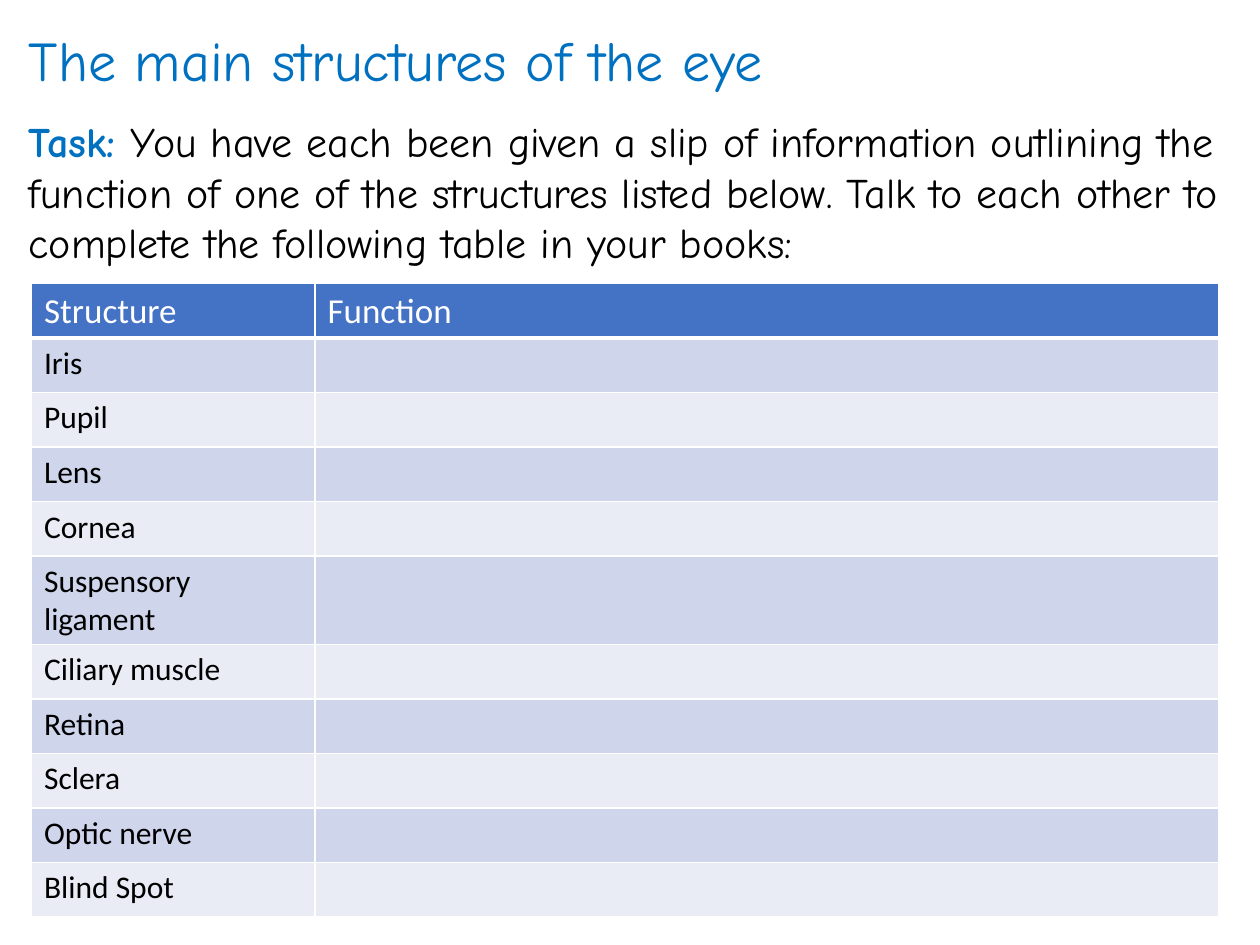
from lxml.etree import SubElement
from pptx import Presentation
from pptx.dml.color import RGBColor
from pptx.enum.text import MSO_ANCHOR, MSO_AUTO_SIZE, PP_ALIGN
from pptx.oxml.ns import qn
from pptx.util import Inches, Pt

COLORS = {
    "accent": "0070C0", "text": "000000", "white": "FFFFFF",
    "header": "4472C4", "dark_band": "CFD5EA", "light_band": "E9EBF5",
}
HEADING_FONT, TABLE_FONT = "Comic Neue", "Calibri"
STRUCTURES = [
    "Iris", "Pupil", "Lens", "Cornea", "Suspensory ligament",
    "Ciliary muscle", "Retina", "Sclera", "Optic nerve", "Blind Spot",
]
TWO_LINE_ROW = 1 + STRUCTURES.index("Suspensory ligament")
LEFT = 0.13
TABLE_BOX = (0.25, 2.25, 9.42, 5.03)
COLUMN_WIDTHS = (2.25, 7.17)
TALL_ROW = 0.7


def color(name):
    return RGBColor.from_string(COLORS[name])


def add_text(paragraph, text, *, size, font, fill="text", bold=False):
    run = paragraph.add_run()
    run.text = text
    run.font.size = Pt(size)
    run.font.name = font
    run.font.bold = bold
    run.font.color.rgb = color(fill)


def format_frame(shape):
    """Wrap the text from the top left and return its first paragraph."""
    frame = shape.text_frame
    frame.word_wrap = True
    frame.vertical_anchor = MSO_ANCHOR.TOP
    frame.auto_size = MSO_AUTO_SIZE.SHAPE_TO_FIT_TEXT
    frame.paragraphs[0].alignment = PP_ALIGN.LEFT
    return frame.paragraphs[0]


def add_title(slide):
    title = slide.shapes.title
    title.left, title.top = Inches(LEFT), Inches(0.15)
    title.width, title.height = Inches(8.17), Inches(0.64)
    add_text(format_frame(title), "The main structures of the eye",
             size=32, font=HEADING_FONT, fill="accent")


def add_task(slide):
    box = slide.shapes.add_textbox(Inches(LEFT), Inches(0.87), Inches(9.87), Inches(1.31))
    paragraph = format_frame(box)
    add_text(paragraph, "Task: ", size=24, font=HEADING_FONT, fill="accent", bold=True)
    add_text(paragraph,
             "You have each been given a slip of information outlining the function "
             "of one of the structures listed below. Talk to each other to complete "
             "the following table in your books:",
             size=24, font=HEADING_FONT)


def set_borders(cell, bottom=1):
    properties = cell._tc.get_or_add_tcPr()
    widths = {"a:lnL": 1, "a:lnR": 1, "a:lnT": 1, "a:lnB": bottom}
    for index, (tag, width) in enumerate(widths.items()):
        line = SubElement(properties, qn(tag), w=str(Pt(width)))
        fill = SubElement(line, qn("a:solidFill"))
        SubElement(fill, qn("a:srgbClr"), val=COLORS["white"])
        properties.insert(index, line)  # borders come before the cell fill


def add_structure_table(slide):
    rows = [("Structure", "Function")] + [(name, "") for name in STRUCTURES]
    frame = slide.shapes.add_table(len(rows), 2, *map(Inches, TABLE_BOX))
    table = frame.table
    for column, width in zip(table.columns, COLUMN_WIDTHS):
        column.width = Inches(width)

    # All rows share the height that the two-line row leaves
    row_height = (TABLE_BOX[3] - TALL_ROW) / (len(rows) - 1)
    for index, texts in enumerate(rows):
        header = index == 0
        table.rows[index].height = Inches(TALL_ROW if index == TWO_LINE_ROW else row_height)
        band = "header" if header else ("dark_band" if index % 2 else "light_band")
        for cell, text in zip(table.rows[index].cells, texts):
            cell.fill.solid()
            cell.fill.fore_color.rgb = color(band)
            set_borders(cell, bottom=3 if header else 1)
            if text:
                add_text(cell.text_frame.paragraphs[0], text,
                         size=20 if header else 18, font=TABLE_FONT,
                         fill="white" if header else "text")


def main():
    presentation = Presentation()
    presentation.slide_width, presentation.slide_height = Inches(10), Inches(7.5)
    slide = presentation.slides.add_slide(presentation.slide_layouts[5])
    add_title(slide)
    add_structure_table(slide)
    add_task(slide)
    presentation.save("out.pptx")


if __name__ == "__main__":
    main()
